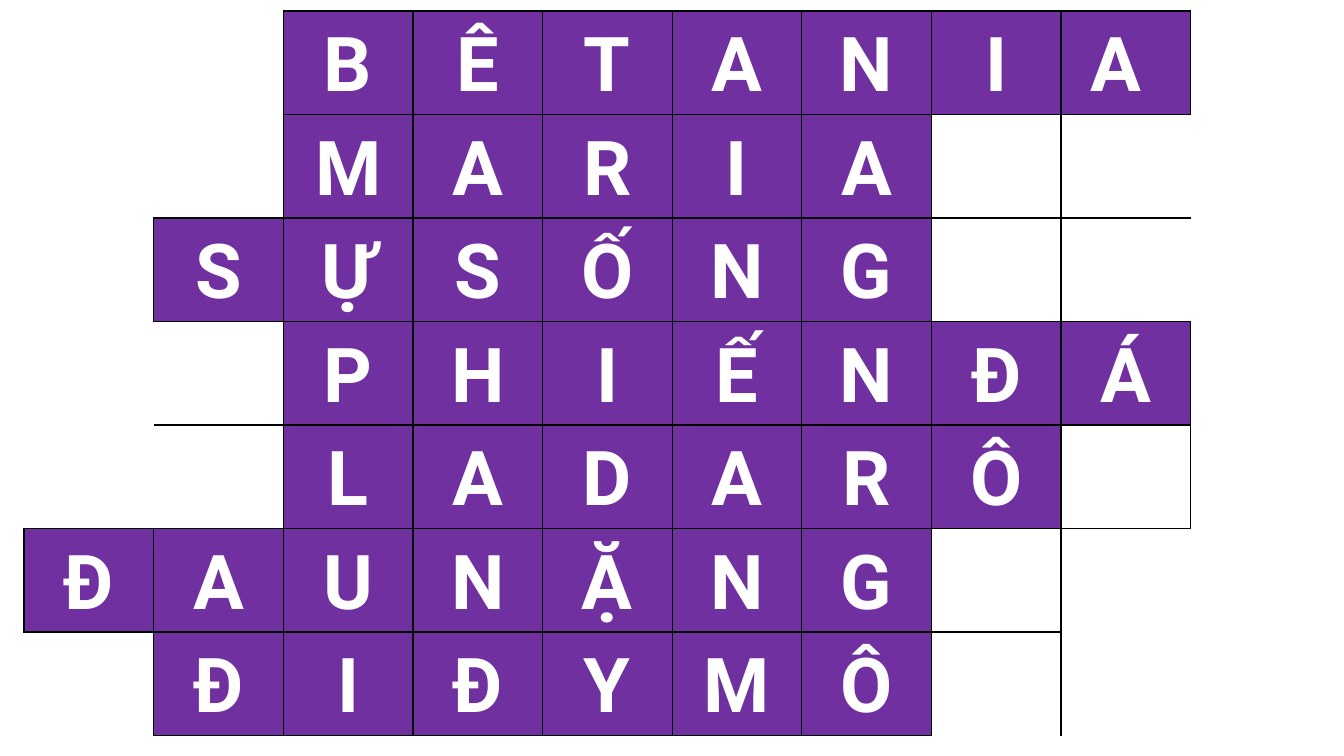
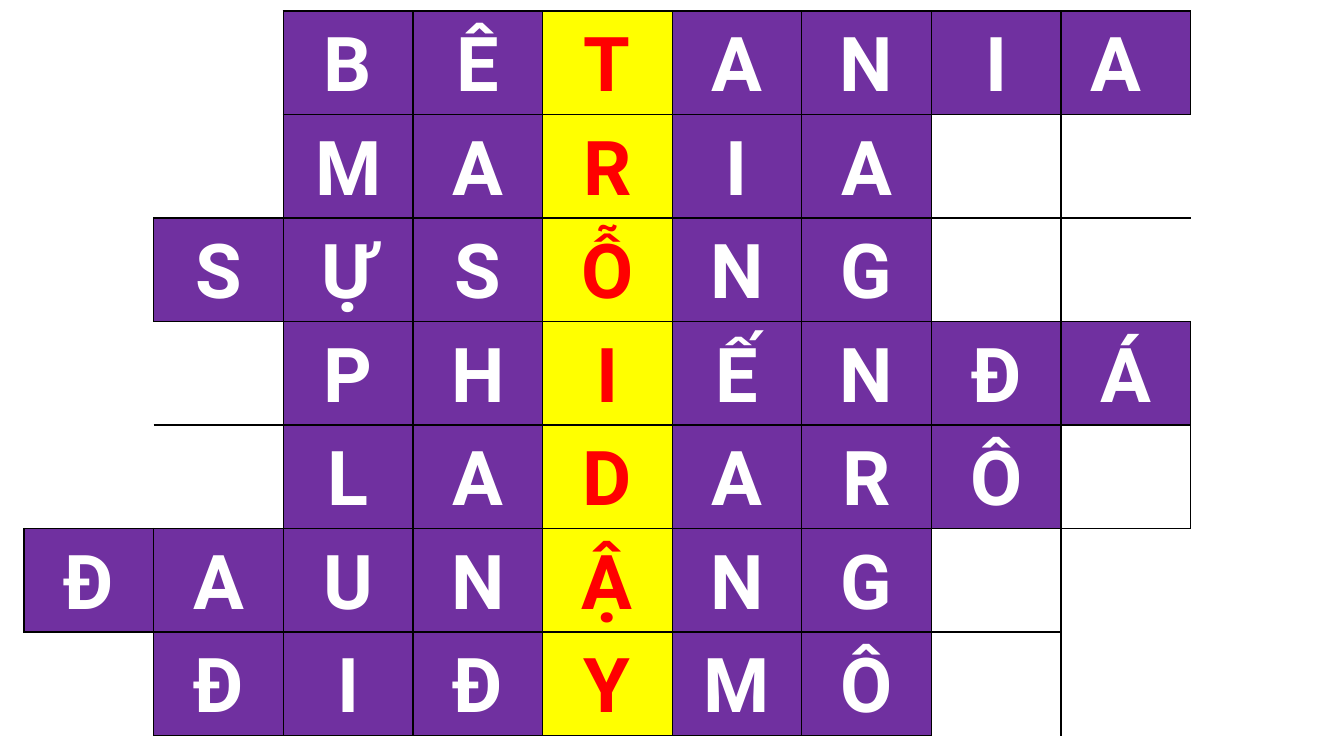
from lxml import etree
from pptx import Presentation
from pptx.dml.color import RGBColor
from pptx.enum.text import MSO_ANCHOR, PP_ALIGN
from pptx.oxml.ns import qn
from pptx.util import Pt

CENTER, MIDDLE = PP_ALIGN.CENTER, MSO_ANCHOR.MIDDLE
PURPLE, WHITE, YELLOW, RED, BLACK = "7030A0", "FFFFFF", "FFFF00", "FF0000", "000000"
FONT, LETTER_SIZE, BORDER_WIDTH = "Roboto", 54, 1
NO_GRID_STYLE = "{2D5ABB26-0587-4C30-8999-92F81FD0307C}"

GRID_BOX = (17.2, 7.9, 926, 517.6)
COLUMNS, KEY_COLUMN = 10, 4
ANSWERS = [  # first column, word
    (2, "BÊTANIA"),
    (2, "MARIA"),
    (1, "SỰSỐNG"),
    (2, "PHIẾNĐÁ"),
    (2, "LADARÔ"),
    (0, "ĐAUNẶNG"),
    (1, "ĐIĐYMÔ"),
]
KEYWORD = "TRỖIDẬY"
SIDE_MARGIN = 5
OFFSET_CELL, OFFSET_MARGIN = (0, 8), 18.4  # last letter of the first word sits left of centre


def rgb(color):
    return RGBColor.from_string(color)


def add_border(cell, side):
    """Draw one edge of a cell; side is L, R, T or B."""
    line = etree.SubElement(cell._tc.get_or_add_tcPr(), qn("a:ln" + side),
                            w=str(Pt(BORDER_WIDTH)))
    fill = etree.SubElement(line, qn("a:solidFill"))
    etree.SubElement(fill, qn("a:srgbClr"), val=BLACK)


def style_letter(cell, letter, fill, color):
    cell.fill.solid()
    cell.fill.fore_color.rgb = rgb(fill)
    cell.vertical_anchor = MIDDLE
    cell.margin_left = cell.margin_right = Pt(SIDE_MARGIN)
    cell.margin_top = cell.margin_bottom = 0
    cell.text = letter
    para = cell.text_frame.paragraphs[0]
    para.alignment = CENTER
    para.line_spacing = 1.07
    font = para.font
    font.name, font.size, font.bold = FONT, Pt(LETTER_SIZE), True
    font.color.rgb = rgb(color)


def add_plain_table(page, box, rows, columns):
    """Add an evenly divided table without banding or grid."""
    left, top, width, height = box
    table = page.shapes.add_table(rows, columns, Pt(left), Pt(top),
                                  Pt(width), Pt(height)).table
    table.first_row = table.horz_banding = False
    table._tbl.tblPr.find(qn("a:tableStyleId")).text = NO_GRID_STYLE
    for column in table.columns:
        column.width = Pt(width / columns)
    for row in table.rows:
        row.height = Pt(height / rows)
    return table


def add_crossword(page, box, keyword=None):
    """Fill the crossword; a keyword is highlighted down the key column."""
    table = add_plain_table(page, box, len(ANSWERS), COLUMNS)
    letters = {(row, start + i): letter
               for row, (start, word) in enumerate(ANSWERS)
               for i, letter in enumerate(word)}
    if keyword:
        letters.update({(row, KEY_COLUMN): letter for row, letter in enumerate(keyword)})

    for row in range(len(ANSWERS)):
        for col in range(COLUMNS):
            cell = table.cell(row, col)
            neighbours = {"L": (row, col - 1), "R": (row, col + 1),
                          "T": (row - 1, col), "B": (row + 1, col)}
            for side, neighbour in neighbours.items():
                if (row, col) in letters or neighbour in letters:
                    add_border(cell, side)
            if (row, col) in letters:
                highlighted = keyword and col == KEY_COLUMN
                fill, color = (YELLOW, RED) if highlighted else (PURPLE, WHITE)
                style_letter(cell, letters[row, col], fill, color)
    table.cell(*OFFSET_CELL).margin_right = Pt(OFFSET_MARGIN)


def main():
    deck = Presentation()
    deck.slide_width, deck.slide_height = Pt(960), Pt(540)
    for keyword in (None, KEYWORD):
        page = deck.slides.add_slide(deck.slide_layouts[6])
        add_crossword(page, GRID_BOX, keyword)
    deck.save("out.pptx")


if __name__ == "__main__":
    main()
